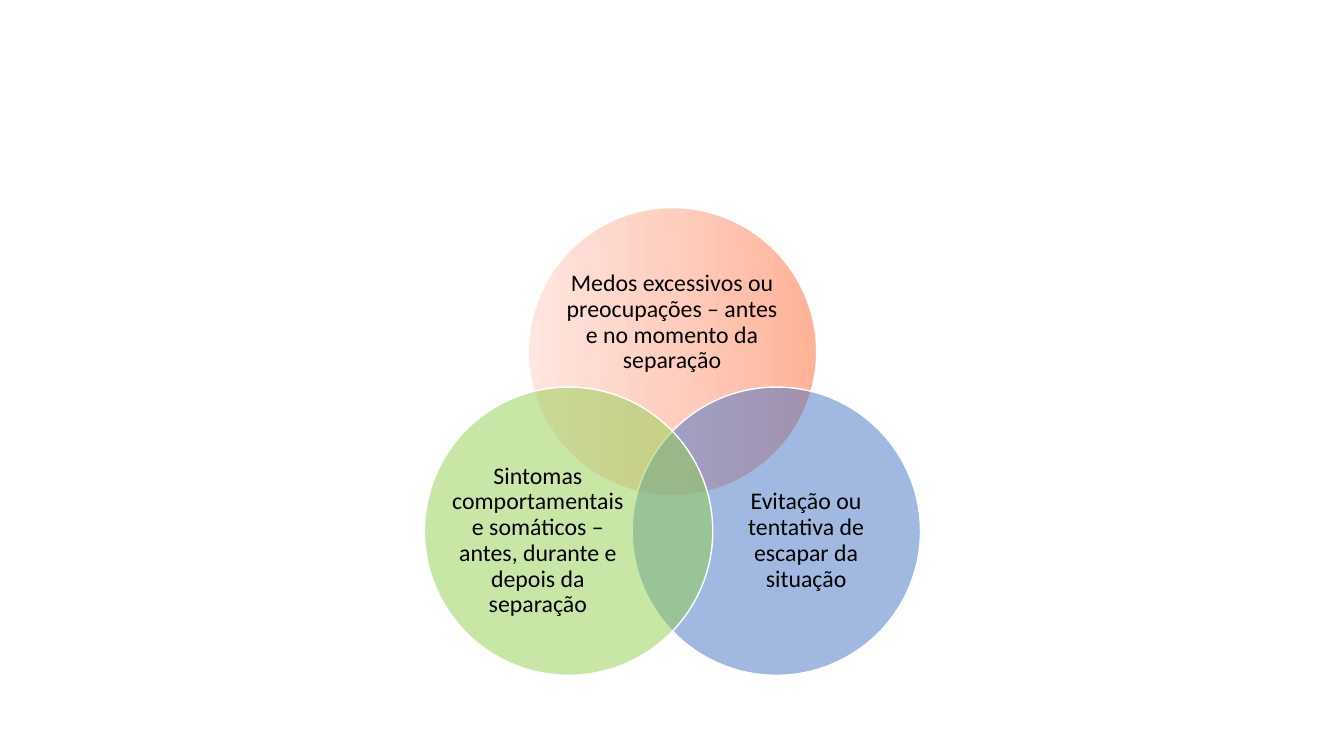
from copy import deepcopy

from lxml.etree import SubElement
from pptx import Presentation
from pptx.dml.color import RGBColor as RGB
from pptx.enum.shapes import MSO_SHAPE as SHAPE
from pptx.enum.text import MSO_ANCHOR as ANCHOR, PP_ALIGN as ALIGN
from pptx.oxml.ns import qn
from pptx.util import Inches, Pt

COLORS = {
    "white": "FFFFFF",
    "black": "000000",
    "blue": "4472C4",
    "green": "92D050",
    "coral": "FFB297",
    "peach": "FFCEBF",
    "blush": "FFE6E0",
}
DIAMETER = 2.86


def rgb(name):
    return RGB.from_string(COLORS[name])


def write_text(tf, text, size=17, font="Calibri", color="black", spacing=0.9):
    p = tf.paragraphs[0]
    p.alignment = ALIGN.CENTER
    p.line_spacing = spacing
    r = p.add_run()
    r.text = text
    r.font.size = Pt(size)
    r.font.name = font
    r.font.color.rgb = rgb(color)


class VennSlide:
    def __init__(self, prs):
        slide = prs.slides.add_slide(prs.slide_layouts[6])
        fill = slide.background.fill
        fill.solid()
        fill.fore_color.rgb = rgb("white")
        self.shapes = slide.shapes.add_group_shape().shapes

    def circle(self, left, top):
        sp = self.shapes.add_shape(
            SHAPE.OVAL, Inches(left), Inches(top), Inches(DIAMETER), Inches(DIAMETER)
        )
        sp.shadow.inherit = False
        sp.line.color.rgb = rgb("white")
        sp.line.width = Pt(1)
        return sp

    def gradient_circle(self, left, top, colors):
        sp = self.circle(left, top)
        sp.fill.gradient()
        sp.fill.gradient_angle = 180
        first = sp._element.spPr.find(".//" + qn("a:gs"))
        first.addnext(deepcopy(first))
        for i, (stop, color) in enumerate(zip(sp.fill.gradient_stops, colors)):
            stop.position = i / (len(colors) - 1)
            stop.color.rgb = rgb(color)

    def clear_circle(self, left, top, color, opacity=50):
        sp = self.circle(left, top)
        sp.fill.solid()
        sp.fill.fore_color.rgb = rgb(color)
        clr = sp._element.spPr.find(qn("a:solidFill")).find(qn("a:srgbClr"))
        SubElement(clr, qn("a:alpha"), val=str(opacity * 1000))

    def label(self, left, top, width, height, text):
        box = self.shapes.add_textbox(
            Inches(left), Inches(top), Inches(width), Inches(height)
        )
        tf = box.text_frame
        tf.word_wrap = True
        tf.vertical_anchor = ANCHOR.MIDDLE
        tf.margin_left = tf.margin_right = tf.margin_top = tf.margin_bottom = 0
        write_text(tf, text)


def main():
    prs = Presentation()
    prs.slide_width, prs.slide_height = Inches(13.33), Inches(7.5)
    venn = VennSlide(prs)

    venn.gradient_circle(5.24, 2.06, ("coral", "peach", "blush"))
    venn.label(5.62, 2.56, 2.09, 1.28,
               "Medos excessivos ou preocupações – antes e no momento da separação")

    lower = (
        (6.27, 7.14, "blue", "Evitação ou tentativa de escapar da situação"),
        (4.21, 4.48, "green",
         "Sintomas comportamentais e somáticos – antes, durante e depois da separação"),
    )
    for left, text_left, color, text in lower:
        venn.clear_circle(left, 3.84, color)
        venn.label(text_left, 4.58, 1.71, 1.57, text)

    prs.save("out.pptx")


if __name__ == "__main__":
    main()
